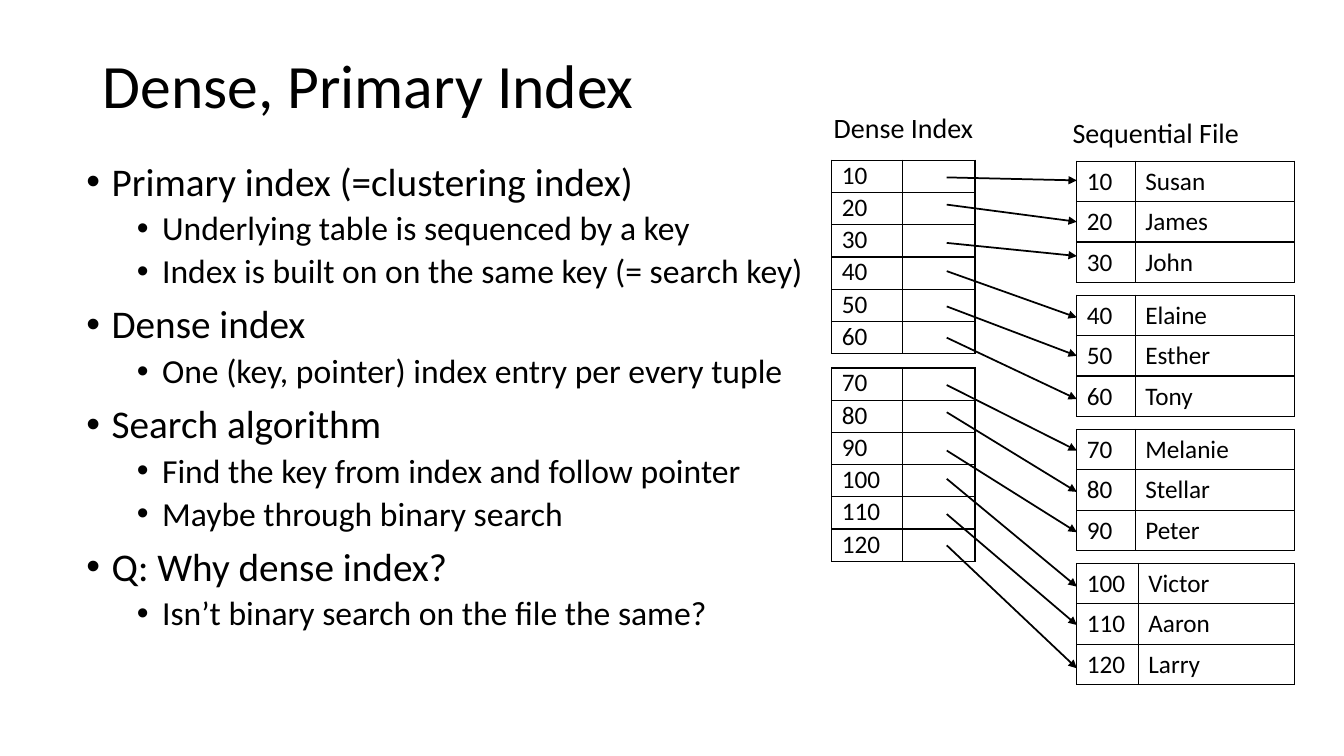
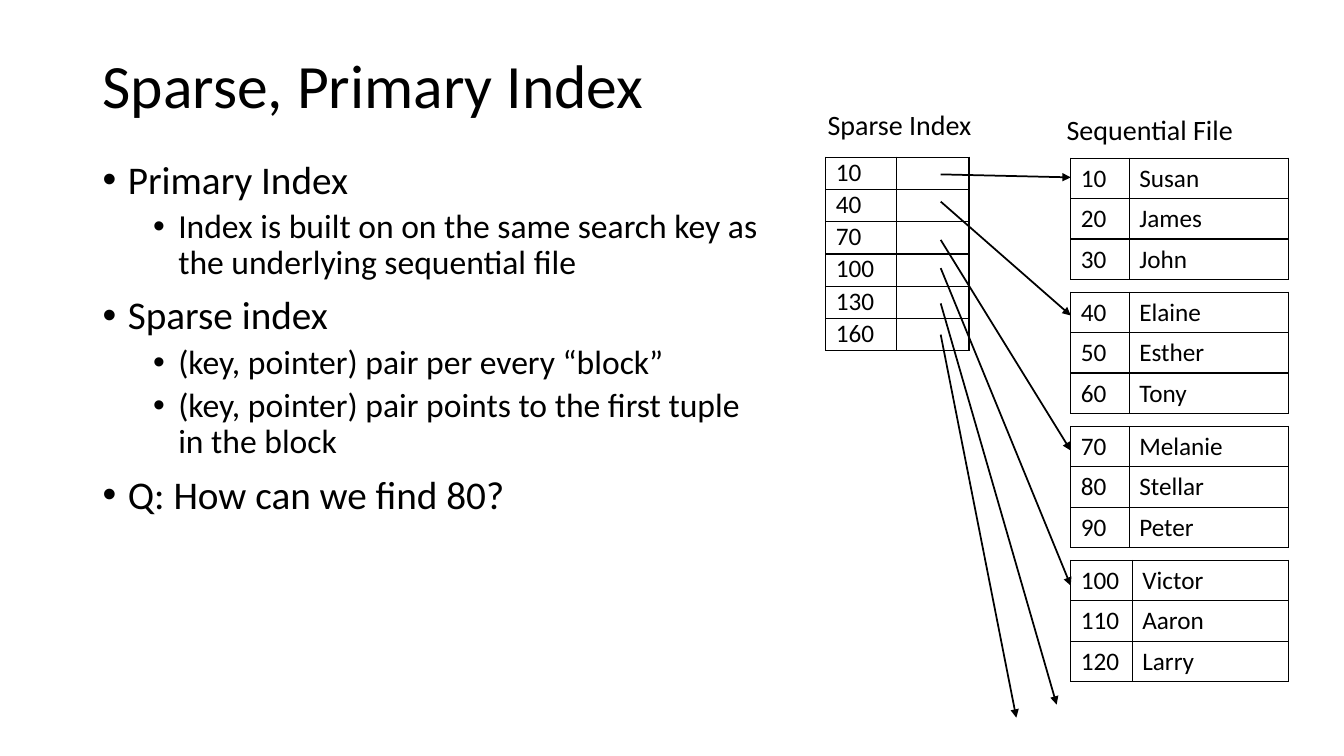
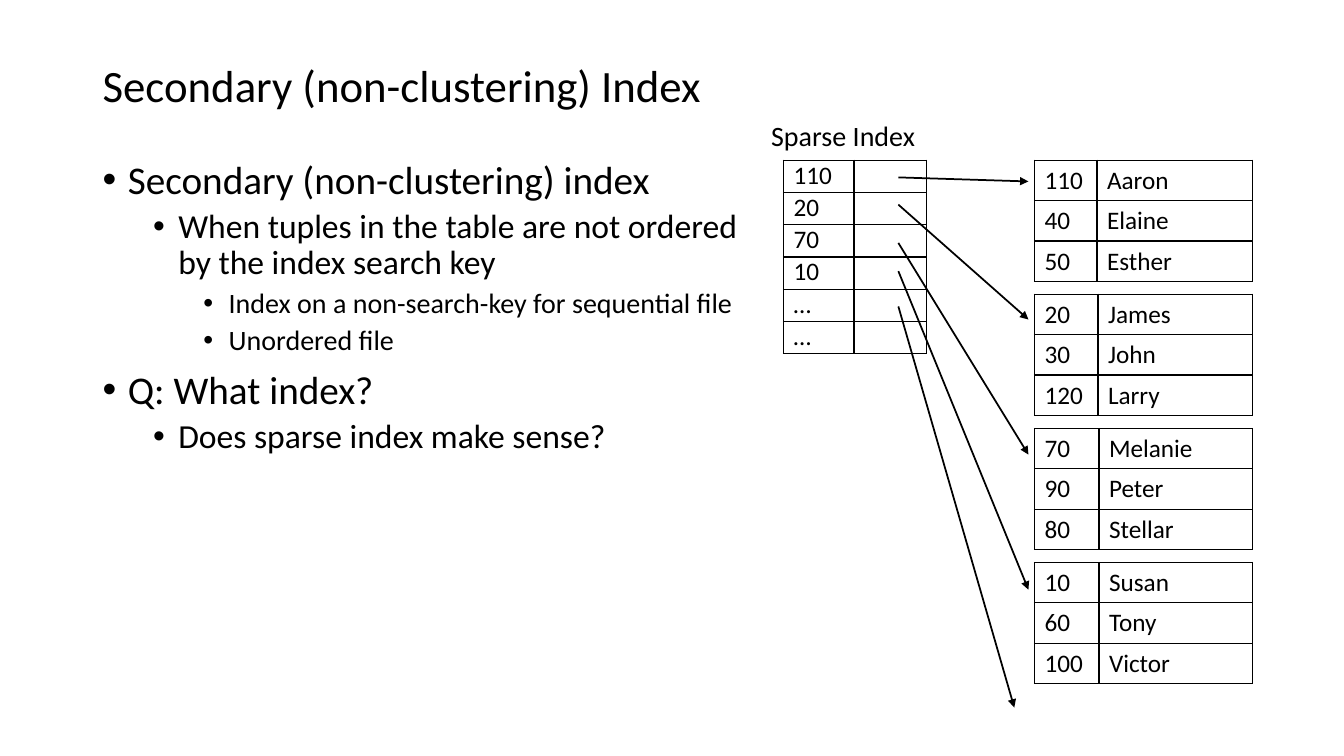
from pptx import Presentation
from pptx.dml.color import RGBColor
from pptx.enum.shapes import MSO_CONNECTOR
from pptx.enum.text import MSO_ANCHOR, MSO_AUTO_SIZE
from pptx.oxml.ns import qn
from pptx.util import Inches, Pt
from lxml.etree import SubElement

LINE = MSO_CONNECTOR.STRAIGHT
MIDDLE = MSO_ANCHOR.MIDDLE
GROW = MSO_AUTO_SIZE.SHAPE_TO_FIT_TEXT
BLACK = RGBColor(0, 0, 0)
FONT = "Calibri"

LEVELS = [(28, 10), (24, 5), (20, 5)]
STARTS = [0.17, 0.44, 0.82, 1.10, 1.45, 1.76]
TAIL = 1.14
INDEX = {"cols": (0.7, 0.72), "row": 0.32, "pad": 0, "step": 2.06}
FILE = {"wide": 2.16, "row": 0.4, "pad": 0.05, "step": 1.33}

SORTED = [
    (0.58, [("10", "Susan"), ("20", "James"), ("30", "John")]),
    (0.58, [("40", "Elaine"), ("50", "Esther"), ("60", "Tony")]),
    (0.58, [("70", "Melanie"), ("80", "Stellar"), ("90", "Peter")]),
    (0.61, [("100", "Victor"), ("110", "Aaron"), ("120", "Larry")]),
]
MIXED = [
    (0.62, [("110", "Aaron"), ("40", "Elaine"), ("50", "Esther")]),
    (0.63, [("20", "James"), ("30", "John"), ("120", "Larry")]),
    (0.64, [("70", "Melanie"), ("90", "Peter"), ("80", "Stellar")]),
    (0.64, [("10", "Susan"), ("60", "Tony"), ("100", "Victor")]),
]

SLIDES = [
    {
        "title": ("Dense, Primary Index", 44),
        "body": (0.76, 1.56, [
            (0, "Primary index (=clustering index)"),
            (1, "Underlying table is sequenced by a key"),
            (1, "Index is built on on the same key (= search key)"),
            (0, "Dense index"),
            (1, "One (key, pointer) index entry per every tuple"),
            (0, "Search algorithm"),
            (1, "Find the key from index and follow pointer"),
            (1, "Maybe through binary search"),
            (0, "Q: Why dense index?"),
            (1, "Isn’t binary search on the file the same?"),
        ]),
        "labels": [("Sequential File", 10.54, 1.1, 1.87),
                   ("Dense Index", 8.17, 1.05, 1.6)],
        "index": (8.25, 1.59, [
            ["10", "20", "30", "40", "50", "60"],
            ["70", "80", "90", "100", "110", "120"],
        ]),
        "file": (10.68, 1.6, SORTED),
        "heads": [(10.68, y) for y in (
            1.79, 2.2, 2.54, 3.15, 3.53, 3.96,
            4.47, 4.88, 5.28, 5.82, 6.2, 6.63)],
    },
    {
        "title": ("Sparse, Primary Index", 44),
        "body": (0.92, 1.54, [
            (0, "Primary Index"),
            (1, "Index is built on on the same search key as \n"
                "the underlying sequential file"),
            (0, "Sparse index"),
            (1, "(key, pointer) pair per every “block”"),
            (1, "(key, pointer) pair points to the first tuple \n"
                "in the block"),
            (0, "Q: How can we find 80?"),
        ]),
        "labels": [("Sequential File", 10.48, 1.07, 1.87),
                   ("Sparse Index", 8.11, 1.02, 1.64)],
        "index": (8.19, 1.56, [["10", "40", "70", "100", "130", "160"]]),
        "file": (10.62, 1.57, SORTED),
        "heads": [(10.62, 1.76), (10.62, 3.13), (10.62, 4.47),
                  (10.62, 5.81), (10.48, 6.99), (10.08, 7.12)],
    },
    {
        "title": ("Secondary (non-clustering) Index", 32),
        "body": (0.92, 1.54, [
            (0, "Secondary (non-clustering) index"),
            (1, "When tuples in the table are not ordered \n"
                "by the index search key"),
            (2, "Index on a non-search-key for sequential file"),
            (2, "Unordered file"),
            (0, "Q: What index?"),
            (1, "Does sparse index make sense?"),
        ]),
        "labels": [("Sparse Index", 7.55, 1.13, 1.64)],
        "index": (7.77, 1.59, [["110", "20", "70", "10", "…", "…"]]),
        "file": (10.26, 1.59, MIXED),
        "heads": [(10.2, 1.8), (10.2, 3.17), (10.2, 4.51),
                  (10.2, 5.85), (10.06, 7.02)],
    },
]


def style(font, size):
    font.name = FONT
    font.size = Pt(size)
    font.color.rgb = BLACK


def write(para, text, size):
    for num, part in enumerate(text.split("\n")):
        if num:
            para.add_line_break()
        run = para.add_run()
        run.text = part
        style(run.font, size)


def add_box(slide, left, top, width, height):
    box = slide.shapes.add_textbox(
        Inches(left), Inches(top), Inches(width), Inches(height))
    frame = box.text_frame
    frame.word_wrap = True
    return frame


def add_title(slide, text, size):
    frame = add_box(slide, 0.92, 0.33, 11.5, 1.09)
    frame.vertical_anchor = MIDDLE
    para = frame.paragraphs[0]
    para.line_spacing = 0.9
    write(para, text, size)


def add_body(slide, left, top, items):
    frame = add_box(slide, left, top, 11.5, 5.22)
    for num, (level, text) in enumerate(items):
        para = frame.add_paragraph() if num else frame.paragraphs[0]
        size, gap = LEVELS[level]
        para.level = level
        para.line_spacing = 0.9
        para.space_before = Pt(gap)
        props = para._p.get_or_add_pPr()
        props.set("marL", str(Inches(0.25 + 0.5 * level)))
        props.set("indent", str(Inches(-0.25)))
        SubElement(props, qn("a:buFont"), typeface="Arial")
        SubElement(props, qn("a:buChar"), char="•")
        write(para, text, size)


def add_label(slide, text, left, top, width):
    frame = add_box(slide, left, top, width, 0.44)
    frame.word_wrap = False
    frame.auto_size = GROW
    write(frame.paragraphs[0], text, 20)


def fill_cell(cell, text, pad):
    cell.margin_top = cell.margin_bottom = Inches(pad)
    props = cell._tc.get_or_add_tcPr()
    for side in ("lnL", "lnR", "lnT", "lnB"):
        edge = SubElement(props, qn("a:" + side), w=str(Pt(1)))
        paint = SubElement(edge, qn("a:solidFill"))
        SubElement(paint, qn("a:srgbClr"), val=str(BLACK))
    cell.fill.background()
    para = cell.text_frame.paragraphs[0]
    if text:
        write(para, text, 18)
    else:
        style(para.font, 18)


def add_grid(slide, left, top, cols, rows, kind):
    high = kind["row"]
    table = slide.shapes.add_table(
        len(rows), len(cols), Inches(left), Inches(top),
        Inches(sum(cols)), Inches(high * len(rows))).table
    table.first_row = table.horz_banding = False
    for col, width in zip(table.columns, cols):
        col.width = Inches(width)
    for row, texts in zip(table.rows, rows):
        row.height = Inches(high)
        for cell, text in zip(row.cells, texts):
            fill_cell(cell, text, kind["pad"])


def add_arrow(slide, start, end):
    arrow = slide.shapes.add_connector(
        LINE, *(Inches(v) for v in start + end))
    arrow.line.color.rgb = BLACK
    arrow.line.width = Pt(1.25)
    SubElement(arrow.line._get_or_add_ln(), qn("a:tailEnd"), type="triangle")
    SubElement(arrow._element.spPr, qn("a:effectLst"))


def add_slide(deck, data):
    slide = deck.slides.add_slide(deck.slide_layouts[6])
    add_title(slide, *data["title"])
    add_body(slide, *data["body"])

    left, top, blocks = data["file"]
    for num, (key, rows) in enumerate(blocks):
        cols = (key, FILE["wide"] - key)
        add_grid(slide, left, top + num * FILE["step"], cols, rows, FILE)

    left, top, blocks = data["index"]
    starts = []
    for num, keys in enumerate(blocks):
        base = top + num * INDEX["step"]
        rows = [(key, "") for key in keys]
        add_grid(slide, left, base, INDEX["cols"], rows, INDEX)
        starts += [(left + TAIL, base + drop) for drop in STARTS]
    for start, end in zip(starts, data["heads"]):
        add_arrow(slide, start, end)

    for label in data["labels"]:
        add_label(slide, *label)


def main():
    deck = Presentation()
    deck.slide_width = Inches(13.33)
    deck.slide_height = Inches(7.5)
    for data in SLIDES:
        add_slide(deck, data)
    deck.save("out.pptx")


if __name__ == "__main__":
    main()
